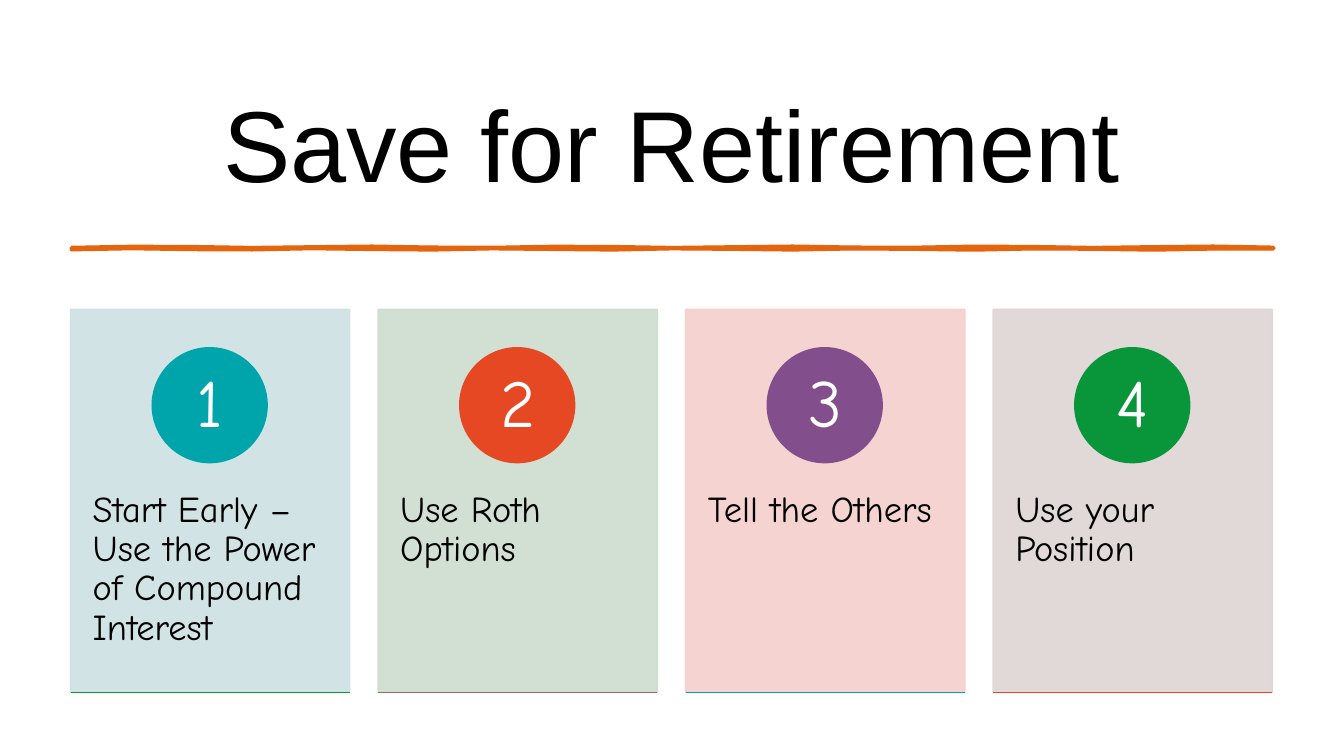
from math import sin
from lxml import etree
from pptx import Presentation
from pptx import util as u
from pptx.dml.color import RGBColor
from pptx.enum import shapes, text
from pptx.oxml.ns import qn

PX = 9144  # 100 px to the inch


def paint(shape, color, alpha=None):
    """Fill and outline a shape in one colour, without shadow."""
    shape.shadow.inherit = False
    shape.fill.solid()
    shape.line.width = u.Pt(1)
    for part in (shape.fill.fore_color, shape.line.color):
        part.rgb = RGBColor.from_string(color)
    if alpha:
        for node in shape._element.spPr.iter(qn("a:srgbClr")):
            etree.SubElement(node, qn("a:alpha")).set("val", str(alpha * 1000))


def write(box, words, size, font, color, inset, anchor, align, space):
    """Place one text box with one run; box and inset are in px."""
    frame = slide.shapes.add_textbox(*(n * PX for n in box)).text_frame
    frame.auto_size = text.MSO_AUTO_SIZE.NONE
    frame.word_wrap = True
    frame.vertical_anchor = anchor
    frame.margin_left = frame.margin_right = inset[0] * PX
    frame.margin_top = frame.margin_bottom = inset[1] * PX
    para = frame.paragraphs[0]
    para.alignment = align
    para.line_spacing = space
    run = para.add_run()
    run.text = words
    run.font.size = u.Pt(size)
    run.font.name = font
    run.font.color.rgb = RGBColor.from_string(color)


deck = Presentation()
deck.slide_width, deck.slide_height = 1333 * PX, 750 * PX
slide = deck.slides.add_slide(deck.slide_layouts[6])

# White backdrop
back = slide.shapes.add_shape(shapes.MSO_SHAPE.RECTANGLE, 0, 0,
                              deck.slide_width, deck.slide_height)
paint(back, "FFFFFF")
back.line.fill.background()

top, mid = text.MSO_ANCHOR.TOP, text.MSO_ANCHOR.MIDDLE
left, center = text.PP_ALIGN.LEFT, text.PP_ALIGN.CENTER

# Title
write((69, 69, 1194, 144), "Save for Retirement", 72, "Arial", "000000",
      (10, 5), mid, center, 1.0)

# Hand-drawn line: two wavy edges, in tenths of a px
steps = range(710, 12631, 596)
upper = [(x, 2452 + round(7 * sin(x / 330))) for x in steps]
lower = [(x, 2472 + round(7 * sin(x / 290))) for x in steps]
edge = upper + lower[::-1]
pen = slide.shapes.build_freeform(*edge[0], scale=PX / 10)
pen.add_line_segments(edge[1:], close=True)
wave = pen.convert_to_shape()
paint(wave, "E4650E")
wave.line.width = u.Pt(2.75)

# Cards: caption, panel, circle and base line colours
cards = [
    ("Start Early – Use the Power of Compound Interest",
     "CCE1E2", "00A5AB", "09963B"),
    ("Use Roth Options", "CCDDCE", "E64823", "9C6A6A"),
    ("Tell the Others", "F5CFCD", "824F8C", "00A5AB"),
    ("Use your Position", "DED4D4", "09963B", "E64823"),
]
wide, pitch = 277, 305
for i, (label, pale, strong, base) in enumerate(cards):
    x = 70 + pitch * i
    panel = slide.shapes.add_shape(shapes.MSO_SHAPE.RECTANGLE,
                                   x * PX, 307 * PX, wide * PX, 380 * PX)
    paint(panel, pale, 90)
    write((x, 451, wide, 228), label, 26, "Comic Neue", "000000",
          (22, 36), top, left, 0.9)

    # Numbered circle
    disc = slide.shapes.add_shape(shapes.MSO_SHAPE.OVAL,
                                  (x + 81) * PX, 345 * PX, 114 * PX, 114 * PX)
    paint(disc, strong)
    write((x + 98, 362, 81, 81), str(i + 1), 48, "Comic Neue", "FFFFFF",
          (9, 1), mid, center, 0.9)

    # Base line
    rule = slide.shapes.add_connector(shapes.MSO_CONNECTOR.STRAIGHT,
                                      x * PX, 687 * PX, (x + wide) * PX, 687 * PX)
    rule.line.width = u.Pt(1)
    rule.line.color.rgb = RGBColor.from_string(base)
    etree.SubElement(rule._element.spPr, qn("a:effectLst"))

deck.save("out.pptx")
